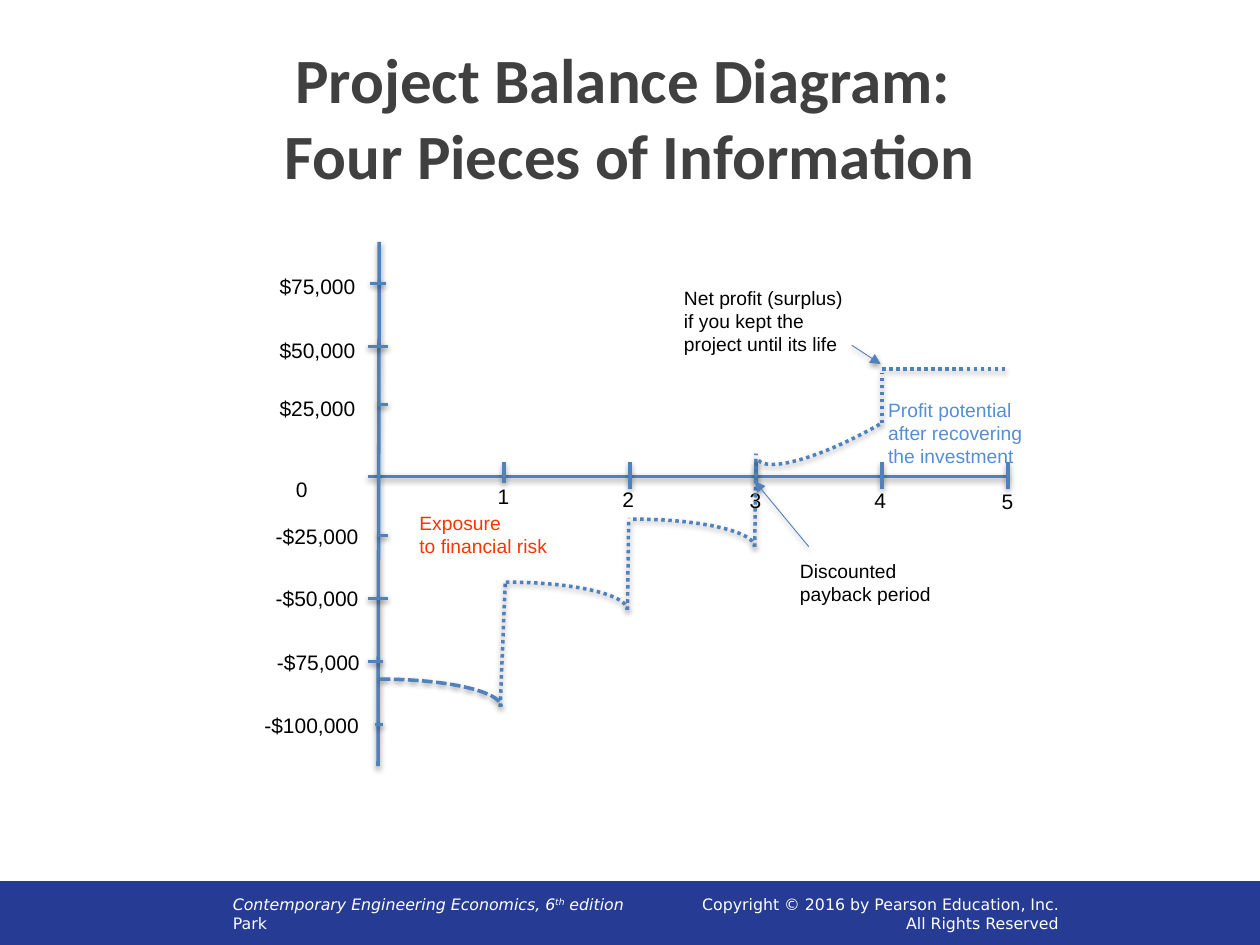
from dataclasses import dataclass

from lxml import etree
from pptx import Presentation
from pptx import util as u
from pptx.dml.color import RGBColor
from pptx.enum import dml, shapes, text
from pptx.oxml.ns import qn

PX = 9144  # 100 px to the inch


@dataclass(frozen=True)
class Theme:
    title: str = "404040"
    ink: str = "000000"
    line: str = "4F81BD"
    profit: str = "558ED5"
    risk: str = "FF3300"
    band: str = "263B94"
    white: str = "FFFFFF"
    title_pt: int = 36
    axis_pt: int = 12
    note_pt: int = 11
    footer_pt: int = 9
    stroke: float = 2
    arrow: float = 0.5


T = Theme()


def write(tf, lines, size, color, font="Arial", bold=None, align=None, wrap=False,
          anchor=text.MSO_ANCHOR.TOP):
    """Each line is a string or a list of (string, marks): i italic, ^ superscript, / break after."""
    tf.word_wrap = wrap
    tf.vertical_anchor = anchor
    for i, line in enumerate(lines):
        p = tf.paragraphs[0] if i == 0 else tf.add_paragraph()
        p.alignment = align
        for content, marks in ([(line, "")] if isinstance(line, str) else line):
            r = p.add_run()
            r.text = content
            r.font.name, r.font.size, r.font.bold = font, u.Pt(size), bold
            r.font.color.rgb = RGBColor.from_string(color)
            if "i" in marks:
                r.font.italic = True
            if "^" in marks:
                r.font._element.set("baseline", "30000")
            if "/" in marks:
                p.add_line_break()


def stroke(sp, width=T.stroke, dash=None, arrow=False):
    """Blue line with a soft shadow below it."""
    sp.line.color.rgb = RGBColor.from_string(T.line)
    sp.line.width = u.Pt(width)
    if dash:
        sp.line.dash_style = dash
    if arrow:
        etree.SubElement(sp.line._get_or_add_ln(), qn("a:tailEnd"), type="triangle")
    effects = etree.SubElement(sp._element.spPr, qn("a:effectLst"))
    shadow = etree.SubElement(effects, qn("a:outerShdw"), blurRad="40000", dist="20000",
                              dir="5400000", rotWithShape="0")
    black = etree.SubElement(shadow, qn("a:srgbClr"), val="000000")
    etree.SubElement(black, qn("a:alpha"), val="38000")


prs = Presentation()
prs.slide_width, prs.slide_height = 1000 * PX, 750 * PX
s = prs.slides.add_slide(prs.slide_layouts[5])

# Title
title = s.shapes.title
title.left, title.top, title.width, title.height = (v * PX for v in (50, 30, 900, 125))
write(title.text_frame,
      [[("Project Balance Diagram: ", "/"), ("Four Pieces of Information", "")]],
      T.title_pt, T.title, font="Calibri", bold=True, align=text.PP_ALIGN.CENTER,
      wrap=True, anchor=text.MSO_ANCHOR.MIDDLE)

# Footer band
band = s.shapes.add_shape(shapes.MSO_SHAPE.RECTANGLE, 0, 700 * PX, 1001 * PX, 50 * PX)
band.shadow.inherit = False
band.fill.solid()
band.fill.fore_color.rgb = band.line.color.rgb = RGBColor.from_string(T.band)
band.line.width = u.Pt(0.75)
footers = [
    (175, 616, text.PP_ALIGN.LEFT,
     [[("Contemporary Engineering Economics, 6", "i"), ("th", "i^"), (" edition", "i")], "Park"]),
    (492, 358, text.PP_ALIGN.RIGHT,
     ["Copyright © 2016 by Pearson Education, Inc.", "All Rights Reserved"]),
]
for x, w, align, lines in footers:
    sp = s.shapes.add_textbox(x * PX, 700 * PX, w * PX, 50 * PX)
    write(sp.text_frame, lines, T.footer_pt, T.white, font="DejaVu Sans", align=align,
          wrap=True, anchor=text.MSO_ANCHOR.MIDDLE)

# Notes on the diagram
notes = [
    (323, 401, 122, T.risk, ["Exposure", "to financial risk"]),
    (625, 439, 125, T.ink, ["Discounted", "payback period"]),
    (695, 311, 131, T.profit, ["Profit potential", "after recovering", "the investment"]),
    (533, 222, 147, T.ink, ["Net profit (surplus)", "if you kept the",
                            "project until its life"]),
]
for x, y, w, color, lines in notes:
    sp = s.shapes.add_textbox(x * PX, y * PX, w * PX, (9 + 19 * len(lines)) * PX)
    write(sp.text_frame, lines, T.note_pt, color)

# Axis labels: left, top, width
labels = [
    ("$75,000", 212, 212, 81), ("$50,000", 212, 263, 81), ("$25,000", 212, 309, 81),
    ("0", 225, 373, 29),
    ("-$25,000", 209, 411, 86), ("-$50,000", 209, 460, 86),
    ("-$75,000", 210, 511, 86), ("-$100,000", 200, 561, 96),
    ("1", 385, 379, 29), ("2", 484, 381, 29), ("3", 585, 382, 29),
    ("4", 684, 382, 29), ("5", 785, 383, 29),
]
for label, x, y, w in labels:
    sp = s.shapes.add_textbox(x * PX, y * PX, w * PX, 30 * PX)
    write(sp.text_frame, [label], T.axis_pt, T.ink)

# Axes, ticks, balance jumps and arrows
DOT, DASH = dml.MSO_LINE.ROUND_DOT, dml.MSO_LINE.SQUARE_DOT  # sysDot, sysDash
axes = [(292, 378, 800, 378), (301, 192, 300, 608)]
year_ticks = [(300 + 100 * n, 367, 300 + 100 * n, 383 if n in (1, 3) else 388)
              for n in range(1, 6)]
money_ticks = [(x1, y, x2, y) for x1, x2, y in [
    (294, 306, 225), (292, 308, 275), (300, 308, 321), (300, 308, 425),
    (292, 308, 475), (292, 304, 525), (298, 304, 575)]]
jumps = [(397, 561, 401, 462), (498, 484, 499, 411), (599, 434, 600, 360),
         (700, 336, 700, 296), (700, 293, 800, 293)]
arrows = [(642, 434, 599, 382), (676, 274, 699, 289)]
groups = [
    (axes + year_ticks + money_ticks, {}),
    (jumps, {"dash": DOT}),
    (arrows, {"width": T.arrow, "arrow": True}),
]
for lines, style in groups:
    for ends in lines:
        sp = s.shapes.add_connector(shapes.MSO_CONNECTOR.STRAIGHT, *(v * PX for v in ends))
        stroke(sp, **style)

# Balance curves within each year
curves = [(205, 539, 193, 44, 0, DASH), (305, 462, 193, 44, 0, DOT),
          (406, 412, 193, 44, 0, DOT), (588, 291, 196, 49, 150.2, DOT)]
for x, y, w, h, turn, dash in curves:
    sp = s.shapes.add_shape(shapes.MSO_SHAPE.ARC, x * PX, y * PX, w * PX, h * PX)
    sp.rotation = turn
    sp.fill.background()
    stroke(sp, dash=dash)

prs.save("out.pptx")
